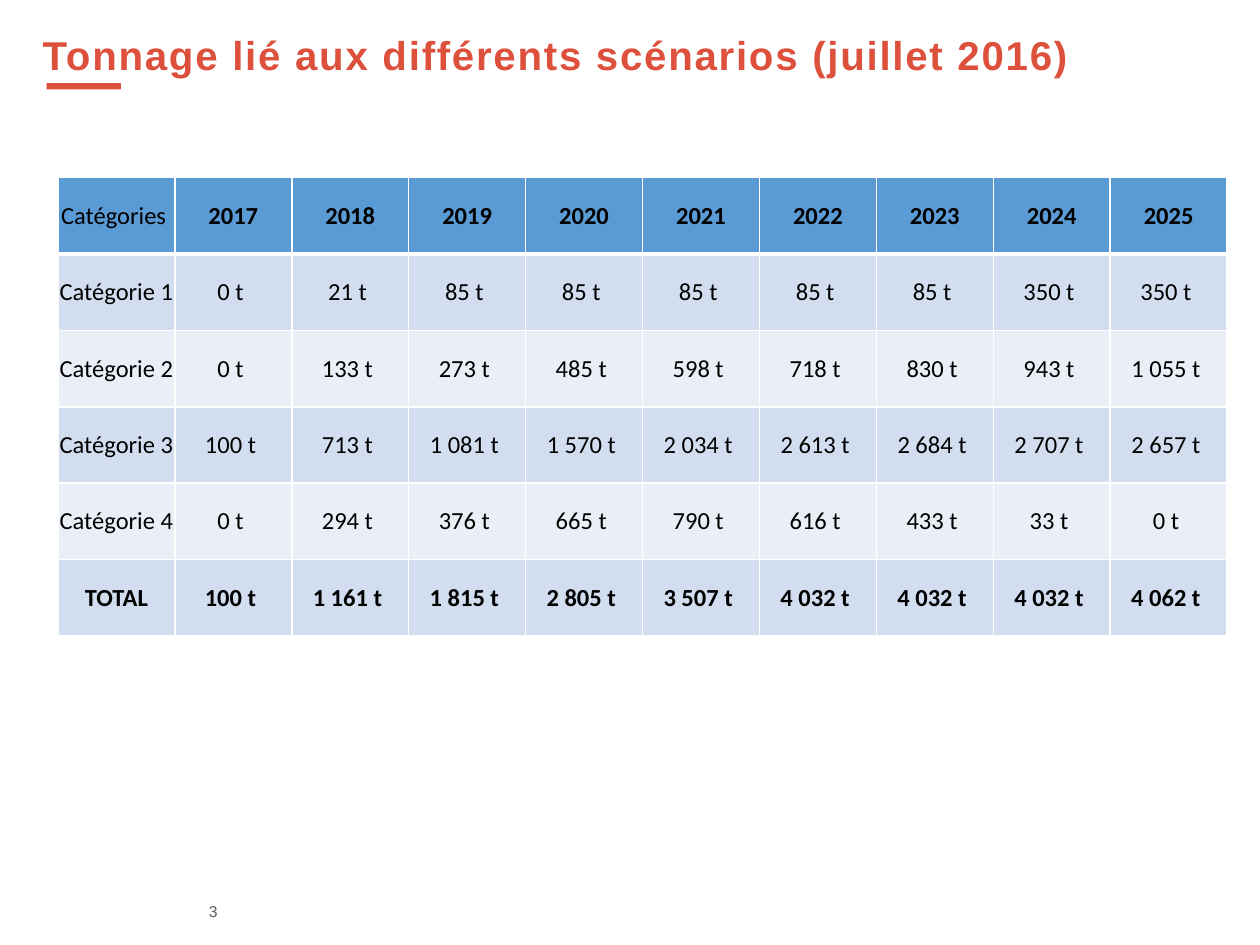
from lxml import etree
from pptx import Presentation
from pptx.dml.color import RGBColor
from pptx.enum import shapes, text
from pptx.oxml import ns
from pptx.util import Inches, Pt

RED = RGBColor(0xDD, 0x50, 0x3C)
GRAY = RGBColor(0x5F, 0x5F, 0x5F)
BLACK = RGBColor(0, 0, 0)
WHITE = RGBColor(0xFF, 0xFF, 0xFF)
HEADER_BLUE = RGBColor(0x5B, 0x9B, 0xD5)
BAND_DARK = RGBColor(0xD2, 0xDE, 0xEF)
BAND_LIGHT = RGBColor(0xEA, 0xEF, 0xF7)

YEARS = range(2017, 2026)
TONNAGES = {
    "Catégorie 1": [0, 21, 85, 85, 85, 85, 85, 350, 350],
    "Catégorie 2": [0, 133, 273, 485, 598, 718, 830, 943, 1055],
    "Catégorie 3": [100, 713, 1081, 1570, 2034, 2613, 2684, 2707, 2657],
    "Catégorie 4": [0, 294, 376, 665, 790, 616, 433, 33, 0],
    "TOTAL": [100, 1161, 1815, 2805, 3507, 4032, 4032, 4032, 4062],
}


def add_border(cell, side, points):
    """Draw one white edge of a cell; side is L, R, T or B."""
    properties = cell._tc.get_or_add_tcPr()
    line = etree.SubElement(properties, ns.qn(f"a:ln{side}"), w=str(Pt(points)))
    fill = etree.SubElement(line, ns.qn("a:solidFill"))
    etree.SubElement(fill, ns.qn("a:srgbClr"), val=str(WHITE))


def add_label(slide, left, top, width, height, content, size, color):
    box = slide.shapes.add_textbox(Inches(left), Inches(top), Inches(width), Inches(height))
    box.text_frame.word_wrap = True
    paragraph = box.text_frame.paragraphs[0]
    paragraph.text = content
    paragraph.font.name = "Arial"
    paragraph.font.size = Pt(size)
    paragraph.font.color.rgb = color
    return box.text_frame


presentation = Presentation()
presentation.slide_width = Inches(10)
presentation.slide_height = Inches(7.5)
slide = presentation.slides.add_slide(presentation.slide_layouts[6])

page_number = add_label(slide, 1.56, 7.14, 0.37, 0.18, "3", 9, GRAY)
page_number.margin_top = page_number.margin_bottom = 0
page_number.vertical_anchor = text.MSO_ANCHOR.MIDDLE

title = add_label(slide, 0.24, 0.2, 8.41, 0.72,
                  "Tonnage lié aux différents scénarios (juillet 2016)", 23, RED)
title.margin_top = Inches(0.08)
title_paragraph = title.paragraphs[0]
title_paragraph.line_spacing = 0.9
title_paragraph.font.bold = True
title_paragraph.runs[0].font._element.set("spc", "100")

underline = slide.shapes.add_shape(
    shapes.MSO_SHAPE.RECTANGLE, Inches(0.37), Inches(0.66), Inches(0.59), Inches(0.05))
underline.shadow.inherit = False
underline.fill.solid()
underline.fill.fore_color.rgb = RED
underline.line.fill.background()

rows = [["Catégories ", *map(str, YEARS)]]
for category, tonnages in TONNAGES.items():
    rows.append([category] + [f"{tonnage:,} t ".replace(",", " ") for tonnage in tonnages])

table = slide.shapes.add_table(
    len(rows), len(rows[0]), Inches(0.46), Inches(1.41), Inches(9.28), Inches(3.64)).table

for row_index, row in enumerate(rows):
    is_header = row_index == 0
    is_total = row_index == len(rows) - 1
    if is_header:
        row_color = HEADER_BLUE
    else:
        row_color = BAND_DARK if row_index % 2 else BAND_LIGHT
    for column_index, content in enumerate(row):
        cell = table.cell(row_index, column_index)
        cell.margin_left = cell.margin_right = cell.margin_top = cell.margin_bottom = 0
        cell.vertical_anchor = text.MSO_ANCHOR.MIDDLE
        add_border(cell, "L", 1)
        add_border(cell, "R", 1)
        add_border(cell, "T", 3 if row_index == 1 else 1)
        add_border(cell, "B", 3 if is_header else 1)
        cell.fill.solid()
        cell.fill.fore_color.rgb = row_color
        paragraph = cell.text_frame.paragraphs[0]
        paragraph.text = content
        paragraph.alignment = text.PP_ALIGN.CENTER
        paragraph.font.name = "Calibri"
        paragraph.font.size = Pt(14)
        paragraph.font.bold = is_total or (is_header and column_index > 0)
        paragraph.font.color.rgb = BLACK

presentation.save("out.pptx")
